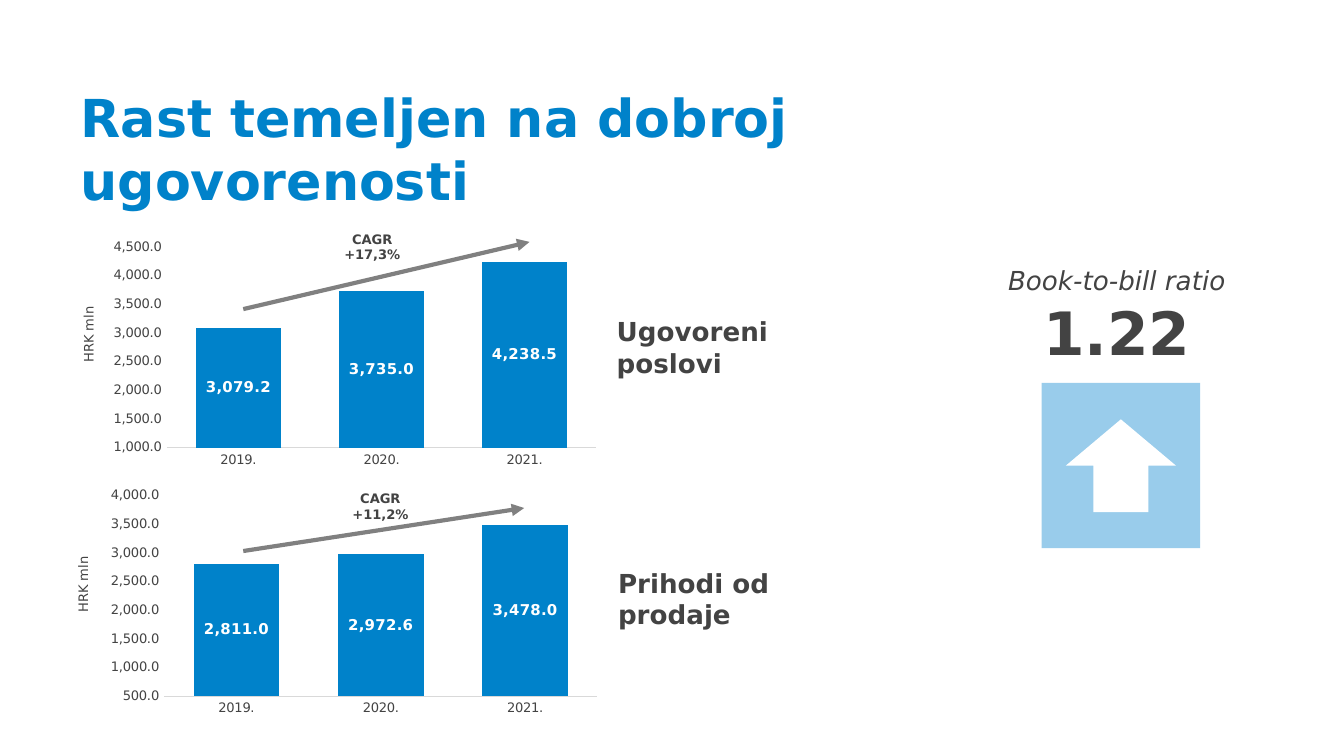
import pptx
import pptx.util
import pptx.dml.color
import pptx.chart.data
import pptx.enum.chart
import pptx.enum.shapes
import pptx.enum.text
import pptx.oxml.ns
import lxml.etree

BLUE = pptx.dml.color.RGBColor(0x00, 0x82, 0xCA)
PALE = pptx.dml.color.RGBColor(0x99, 0xCC, 0xEB)
DARK = pptx.dml.color.RGBColor(0x43, 0x43, 0x43)
GREY = pptx.dml.color.RGBColor(0x80, 0x80, 0x80)
LIGHT = pptx.dml.color.RGBColor(0xD9, 0xD9, 0xD9)
WHITE = pptx.dml.color.RGBColor(0xFF, 0xFF, 0xFF)
FACE = "DejaVu Sans"
LEFT = pptx.enum.text.PP_ALIGN.LEFT
MID = pptx.enum.text.PP_ALIGN.CENTER

deck = pptx.Presentation()
deck.slide_width = pptx.util.Inches(10)
deck.slide_height = deck.slide_width * 9 // 16
unit = deck.slide_width // 100
slide = deck.slides.add_slide(deck.slide_layouts[5])
shapes = slide.shapes


def grid(*cells):
    return [round(cell * unit) for cell in cells]


def style(font, size, color, bold=False, italic=False):
    font.name = FACE
    font.size = pptx.util.Pt(size)
    font.color.rgb = color
    font.bold = bold
    font.italic = italic


title = shapes.title
title.left, title.top, title.width, title.height = grid(5, 5, 57.3, 12.1)
frame = title.text_frame
frame.margin_left = frame.margin_right = unit
frame.margin_top = frame.margin_bottom = unit
frame.vertical_anchor = pptx.enum.text.MSO_ANCHOR.MIDDLE
frame.auto_size = pptx.enum.text.MSO_AUTO_SIZE.NONE
frame.paragraphs[0].alignment = LEFT
run = frame.paragraphs[0].add_run()
run.text = "Rast temeljen na dobroj ugovorenosti"
style(run.font, 28, BLUE, True)

for kind, place, color in [
    (pptx.enum.shapes.MSO_SHAPE.RECTANGLE, (77.5, 28.5, 11.8, 12.3), PALE),
    (pptx.enum.shapes.MSO_SHAPE.UP_ARROW, (79.3, 31.2, 8.2, 6.9), WHITE),
]:
    shape = shapes.add_shape(kind, *grid(*place))
    shape.shadow.inherit = False
    shape.fill.solid()
    shape.fill.fore_color.rgb = color
    shape.line.fill.background()

for place, values, low, high, size in [
    ((7.7, 17.5, 37.4, 17.6), (3079.2, 3735, 4238.5), 1000, 4500, 10),
    ((7.5, 36, 37.7, 17.6), (2811, 2972.6, 3478), 500, 4000, 9),
]:
    data = pptx.chart.data.CategoryChartData(number_format="#,##0.0")
    data.categories = ["2019.", "2020.", "2021."]
    data.add_series("Series 1", values)
    chart = shapes.add_chart(
        pptx.enum.chart.XL_CHART_TYPE.COLUMN_CLUSTERED, *grid(*place), data
    ).chart
    chart.has_legend = False
    chart.has_title = False
    chart.font.name = FACE
    chart.font.size = pptx.util.Pt(size)
    for axis in (chart.category_axis, chart.value_axis):
        axis.major_tick_mark = pptx.enum.chart.XL_TICK_MARK.NONE
        axis.minor_tick_mark = pptx.enum.chart.XL_TICK_MARK.NONE
        axis.has_major_gridlines = False
        style(axis.tick_labels.font, 7, DARK)
    chart.category_axis.format.line.color.rgb = LIGHT
    chart.category_axis.format.line.width = pptx.util.Pt(0.75)
    axis = chart.value_axis
    axis.format.line.fill.background()
    axis.minimum_scale = low
    axis.maximum_scale = high
    axis.major_unit = 500
    axis.tick_labels.number_format = "#,##0.0"
    axis.tick_labels.number_format_is_linked = False
    plot = chart.plots[0]
    plot.vary_by_categories = False
    plot.gap_width = 68
    plot.overlap = -52
    fill = plot.series[0].format.fill
    fill.solid()
    fill.fore_color.rgb = BLUE
    plot.has_data_labels = True
    labels = plot.data_labels
    labels.show_value = True
    labels.position = pptx.enum.chart.XL_LABEL_POSITION.CENTER
    labels.number_format = "#,##0.0"
    labels.number_format_is_linked = False
    style(labels.font, 8, WHITE, True)

for ends in [(18.1, 23, 39.4, 18), (18.1, 41, 39, 37.8)]:
    arrow = shapes.add_connector(
        pptx.enum.shapes.MSO_CONNECTOR.STRAIGHT, *grid(*ends)
    )
    arrow.line.color.rgb = GREY
    arrow.line.width = pptx.util.Pt(2.25)
    tail = lxml.etree.SubElement(
        arrow.line._get_or_add_ln(), pptx.oxml.ns.qn("a:tailEnd")
    )
    tail.set("type", "triangle")
    lxml.etree.SubElement(arrow._element.spPr, pptx.oxml.ns.qn("a:effectLst"))

small = (7, DARK, True)
large = (14, DARK, True)
plain = (7, DARK)
ratio = [
    ("Book-to-bill ratio", (14, DARK, False, True)),
    ("1.22", (32, DARK, True)),
]
for place, align, turn, lines in [
    ((67.7, 19.2, 30.8, 8.8), MID, 0, ratio),
    ((23.3, 16.7, 8.8, 3.4), MID, 0, [("CAGR", small), ("+17,3%", small)]),
    ((23.9, 36, 8.8, 3.4), MID, 0, [("CAGR", small), ("+11,2%", small)]),
    ((44.9, 23, 16.5, 5.7), LEFT, 0, [("Ugovoreni poslovi", large)]),
    ((45, 41.7, 16.5, 5.7), LEFT, 0, [("Prihodi od prodaje", large)]),
    ((1.8, 42.4, 8.8, 2.2), MID, 270, [("HRK mln", plain)]),
    ((2.2, 23.8, 8.8, 2.2), MID, 270, [("HRK mln", plain)]),
]:
    box = shapes.add_textbox(*grid(*place))
    box.rotation = turn
    frame = box.text_frame
    frame.word_wrap = True
    frame.auto_size = pptx.enum.text.MSO_AUTO_SIZE.SHAPE_TO_FIT_TEXT
    for step, (text, look) in enumerate(lines):
        para = frame.add_paragraph() if step else frame.paragraphs[0]
        para.alignment = align
        run = para.add_run()
        run.text = text
        style(run.font, *look)

deck.save("out.pptx")
